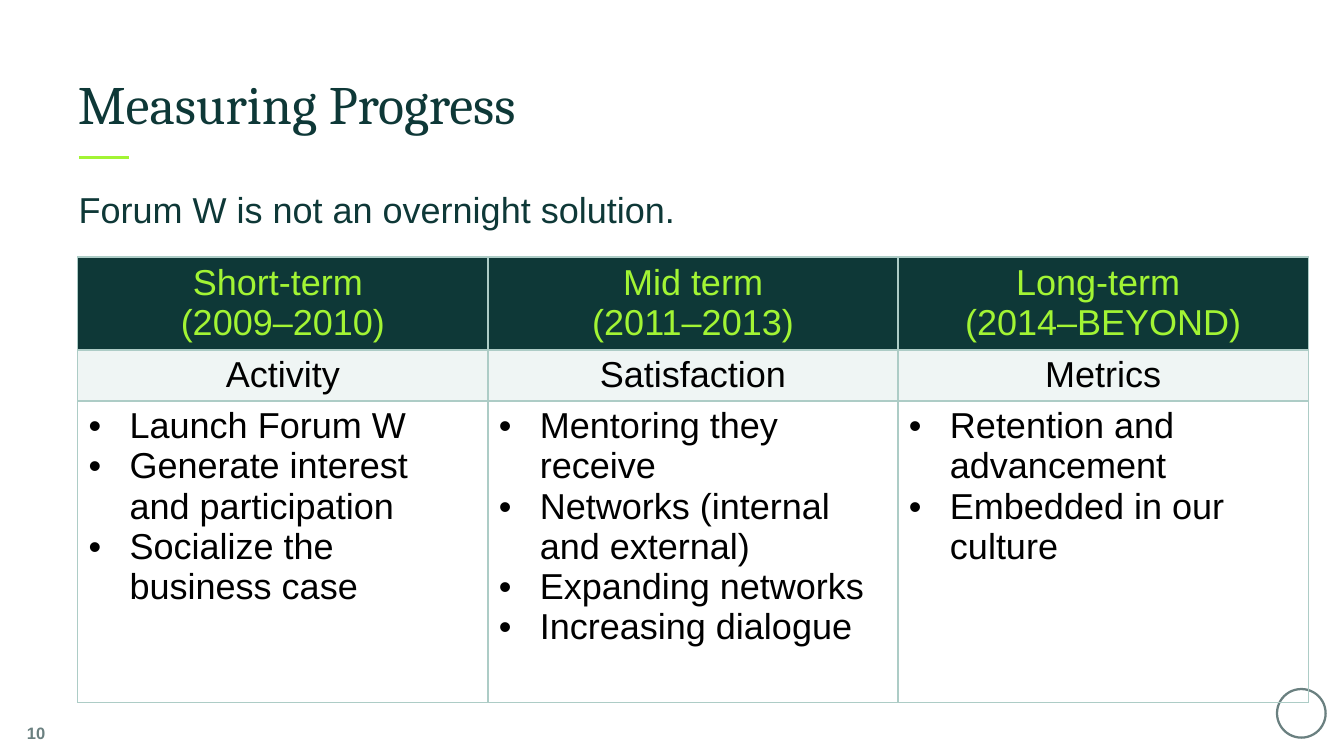
import pptx
import pptx.util
import pptx.oxml
import pptx.dml.color
import pptx.enum.text
import pptx.enum.shapes

Inches = pptx.util.Inches
Pt = pptx.util.Pt
RGB = pptx.dml.color.RGBColor
ALIGN = pptx.enum.text.PP_ALIGN
ANCHOR = pptx.enum.text.MSO_ANCHOR
FIT = pptx.enum.text.MSO_AUTO_SIZE

DARK = RGB(0x0E, 0x38, 0x37)
LIME = RGB(0xA2, 0xF4, 0x34)
GREY = RGB(0x6A, 0x80, 0x80)
PALE = RGB(0xEF, 0xF5, 0xF4)
EDGE = RGB(0xAD, 0xCC, 0xC6)
BLACK = RGB(0, 0, 0)
DRAWNS = "http://schemas.openxmlformats.org/drawingml/2006/main"

TITLE = {"size": Pt(36), "name": "Cambria", "bold": False}
BODY = {"size": Pt(24), "name": "Arial", "bold": False}
SMALL = {"size": Pt(11), "name": "Arial", "bold": True}
FLUSH = {"margin_left": 0, "margin_top": 0, "margin_right": 0,
         "margin_bottom": 0, "word_wrap": True, "auto_size": FIT.NONE}

TERMS = [
    (["Short-term ", "(2009–2010)"], "Activity",
     ["Launch Forum W", "Generate interest and participation",
      "Socialize the business case"]),
    (["Mid term", "(2011–2013)"], "Satisfaction",
     ["Mentoring they receive", "Networks (internal and external)",
      "Expanding networks", "Increasing dialogue"]),
    (["Long-term ", "(2014–BEYOND)"], "Metrics",
     ["Retention and advancement", "Embedded in our culture"]),
]


def apply(item, form):
    """Set each attribute of item from a dict of format values."""
    for name, value in form.items():
        setattr(item, name, value)


def write(frame, lines, form, color, align=ALIGN.LEFT, bullet=False):
    """Write lines as paragraphs with one format."""
    for i, line in enumerate(lines):
        para = frame.add_paragraph() if i else frame.paragraphs[0]
        para.alignment = align
        run = para.add_run()
        run.text = line
        apply(run.font, form)
        run.font.color.rgb = color
        if bullet:
            props = para._p.get_or_add_pPr()
            props.set("marL", str(Inches(0.38)))
            props.set("indent", str(Inches(-0.38)))
            props.append(pptx.oxml.parse_xml(
                f'<a:buFont xmlns:a="{DRAWNS}" typeface="Arial"/>'))
            props.append(pptx.oxml.parse_xml(
                f'<a:buChar xmlns:a="{DRAWNS}" char="•"/>'))


def border(cell):
    """Draw a thin line on all four sides of a cell."""
    props = cell._tc.get_or_add_tcPr()
    for i, side in enumerate("LRTB"):
        props.insert(i, pptx.oxml.parse_xml(
            f'<a:ln{side} xmlns:a="{DRAWNS}" w="{Pt(1)}"><a:solidFill>'
            f'<a:srgbClr val="{EDGE}"/></a:solidFill></a:ln{side}>'))


def add_head(slide, left, top, width, height):
    """Place the title and the short rule below it."""
    title = slide.shapes.title
    apply(title, {"left": left, "top": top, "width": width, "height": height})
    apply(title.text_frame, {**FLUSH, "vertical_anchor": ANCHOR.BOTTOM})
    write(title.text_frame, ["Measuring Progress"], TITLE, DARK)
    level = top + height + Inches(0.21)
    rule = slide.shapes.add_connector(
        pptx.enum.shapes.MSO_CONNECTOR.STRAIGHT,
        left + Inches(0.01), level, left + Inches(0.47), level)
    rule.line.color.rgb = LIME
    rule.line.width = Pt(2)
    rule._element.spPr.append(pptx.oxml.parse_xml(
        f'<a:effectLst xmlns:a="{DRAWNS}"/>'))


def add_lead(slide, left, top, width, height):
    """Place the sentence above the table."""
    frame = slide.shapes.add_textbox(left, top, width, height).text_frame
    frame.word_wrap = True
    write(frame, ["Forum W is not an overnight solution."], BODY, DARK)


def add_terms(slide, left, top, width, height):
    """Place the table with one column for each term."""
    table = slide.shapes.add_table(
        3, len(TERMS), left, top, width, height).table
    first, second = Inches(0.86), Inches(0.46)
    for row, tall in zip(table.rows, (first, second, height - first - second)):
        row.height = tall
    for col, (head, theme, goals) in enumerate(TERMS):
        table.columns[col].width = width // len(TERMS)
        rows = [(head, LIME, ALIGN.CENTER, DARK),
                ([theme], BLACK, ALIGN.CENTER, PALE),
                (goals, BLACK, ALIGN.LEFT, None)]
        for row, (lines, color, align, fill) in enumerate(rows):
            cell = table.cell(row, col)
            if fill is None:
                cell.fill.background()
            else:
                cell.fill.solid()
                cell.fill.fore_color.rgb = fill
            border(cell)
            write(cell.text_frame, lines, BODY, color, align, fill is None)


def add_badge(slide, left, top, size):
    """Place a plain ring in the corner."""
    ring = slide.shapes.add_shape(
        pptx.enum.shapes.MSO_SHAPE.OVAL, left, top, size, size)
    ring.shadow.inherit = False
    ring.fill.background()
    ring.line.color.rgb = GREY
    ring.line.width = Pt(1.5)


def add_page(slide, left, top, width, height):
    """Place the page number."""
    frame = slide.shapes.add_textbox(left, top, width, height).text_frame
    apply(frame, {**FLUSH, "vertical_anchor": ANCHOR.MIDDLE})
    write(frame, ["10"], SMALL, GREY, ALIGN.RIGHT)


def main():
    """Build the slide and save it."""
    deck = pptx.Presentation()
    apply(deck, {"slide_width": Inches(12.44), "slide_height": Inches(7)})
    slide = deck.slides.add_slide(deck.slide_layouts[5])
    add_badge(slide, Inches(11.82), Inches(6.38), Inches(0.45))
    add_head(slide, Inches(0.72), Inches(0.5), Inches(11), Inches(0.75))
    add_page(slide, 0, Inches(6.58), Inches(0.42), Inches(0.42))
    add_terms(slide, Inches(0.72), Inches(2.38), Inches(11.39), Inches(4.11))
    add_lead(slide, Inches(0.63), Inches(1.69), Inches(11.57), Inches(0.5))
    deck.save("out.pptx")


if __name__ == "__main__":
    main()
